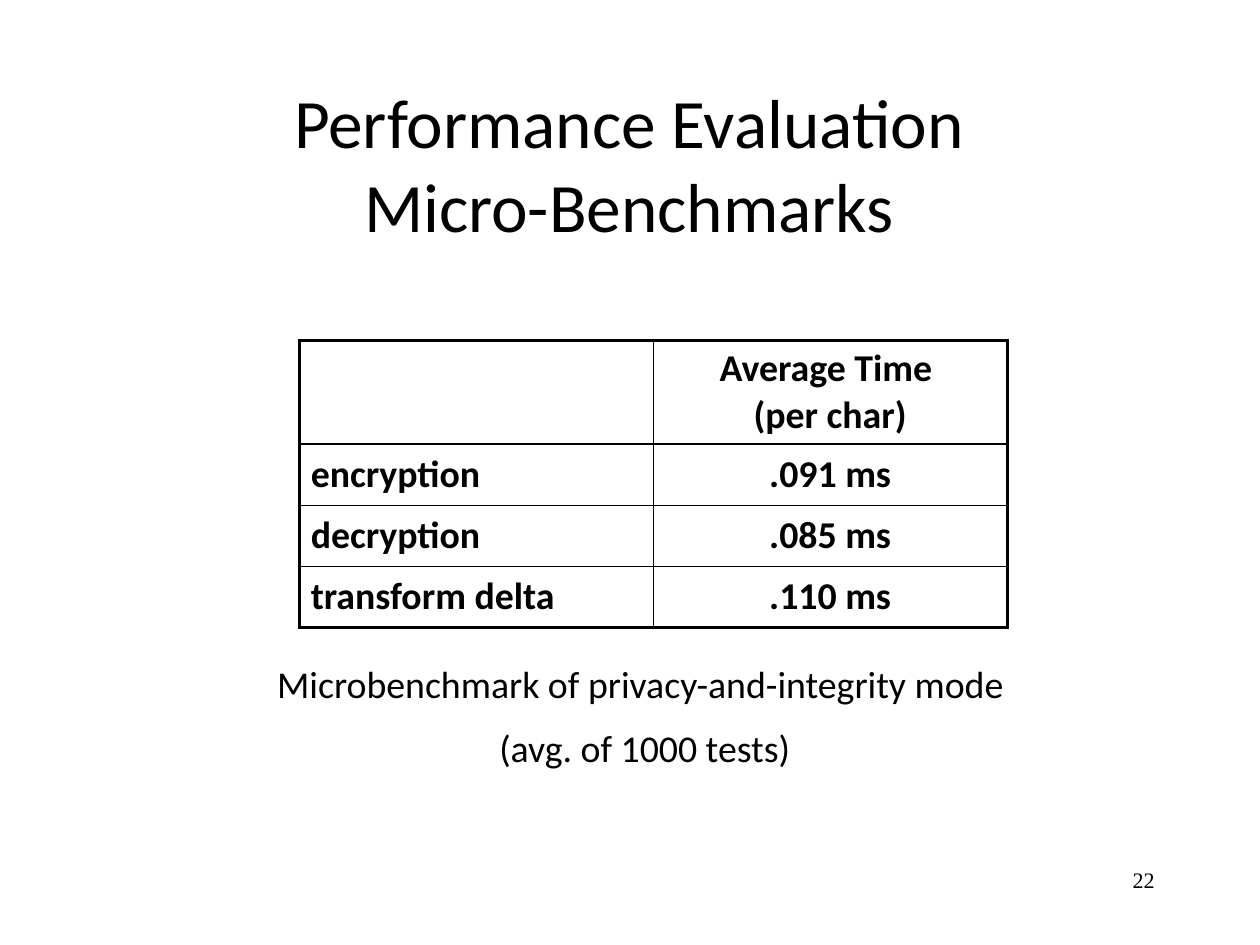
from lxml.etree import SubElement
from pptx import Presentation
from pptx.dml.color import RGBColor
from pptx.enum.text import MSO_ANCHOR as Anchor, PP_ALIGN as Align
from pptx.oxml.ns import qn
from pptx.util import Inches, Pt

TITLE = "Performance Evaluation\vMicro-Benchmarks"
ROWS = [
    ("", "Average Time \n(per char)"),
    ("encryption", ".091 ms"),
    ("decryption", ".085 ms"),
    ("transform delta", ".110 ms"),
]
NOTE = "Microbenchmark of privacy-and-integrity mode \n(avg. of 1000 tests)"
PAGE = "22"
BLACK = RGBColor(0, 0, 0)
WHITE = RGBColor(255, 255, 255)
HEAD, ROW, COL = 0.91, 0.54, 3.12
THIN, THICK = 1, 2.25


def write(frame, text, size, align, face="Calibri", bold=False, gap=0):
    """Fill a text frame with evenly styled paragraphs."""
    frame.text = text
    for i, para in enumerate(frame.paragraphs):
        para.alignment = align
        para.space_before = Pt(gap if i else 0)
        font = para.font
        font.name, font.size, font.bold = face, Pt(size), bold
        font.color.rgb = BLACK


def place(shape, left, top, width, height):
    """Set the position and size of a shape."""
    shape.left, shape.top = Inches(left), Inches(top)
    shape.width, shape.height = Inches(width), Inches(height)


def add_text(slide, box, *args, **style):
    """Add a wrapped text box."""
    frame = slide.shapes.add_textbox(*map(Inches, box)).text_frame
    frame.word_wrap = True
    write(frame, *args, **style)


def rule(cell, outer):
    """Draw cell borders, thick on the outer sides."""
    props = cell._tc.get_or_add_tcPr()
    for i, side in enumerate("LRTB"):
        width = THICK if side in outer else THIN
        line = SubElement(props, qn(f"a:ln{side}"), w=str(Pt(width)))
        fill = SubElement(line, qn("a:solidFill"))
        SubElement(fill, qn("a:srgbClr"), val=str(BLACK))
        props.insert(i, line)


def add_grid(slide):
    """Add the table of average times."""
    last = len(ROWS) - 1
    box = (2.64, 3, 2 * COL, HEAD + last * ROW)
    grid = slide.shapes.add_table(len(ROWS), 2, *map(Inches, box)).table
    for col in grid.columns:
        col.width = Inches(COL)
    for r, row in enumerate(ROWS):
        grid.rows[r].height = Inches(ROW if r else HEAD)
        for c, text in enumerate(row):
            cell = grid.cell(r, c)
            cell.vertical_anchor = Anchor.MIDDLE
            cell.fill.solid()
            cell.fill.fore_color.rgb = WHITE
            align = Align.CENTER if c else Align.LEFT
            write(cell.text_frame, text, 24, align, bold=True)
            outer = "R" if c else "L"
            outer += {0: "T", last: "B"}.get(r, "")
            rule(cell, outer)


def main():
    """Build the benchmark slide."""
    deck = Presentation()
    deck.slide_width, deck.slide_height = Inches(11.11), Inches(8.33)
    slide = deck.slides.add_slide(deck.slide_layouts[5])
    title = slide.shapes.title
    place(title, 0.83, 0.74, 9.44, 1.39)
    title.text_frame.vertical_anchor = Anchor.MIDDLE
    write(title.text_frame, TITLE, 44, Align.CENTER)
    add_grid(slide)
    add_text(slide, (7.96, 7.59, 2.32, 0.56), PAGE, 14, Align.RIGHT,
             face="Times New Roman")
    add_text(slide, (1.81, 5.77, 7.75, 1.11), NOTE, 24, Align.CENTER, gap=12)
    deck.save("out.pptx")


if __name__ == "__main__":
    main()
